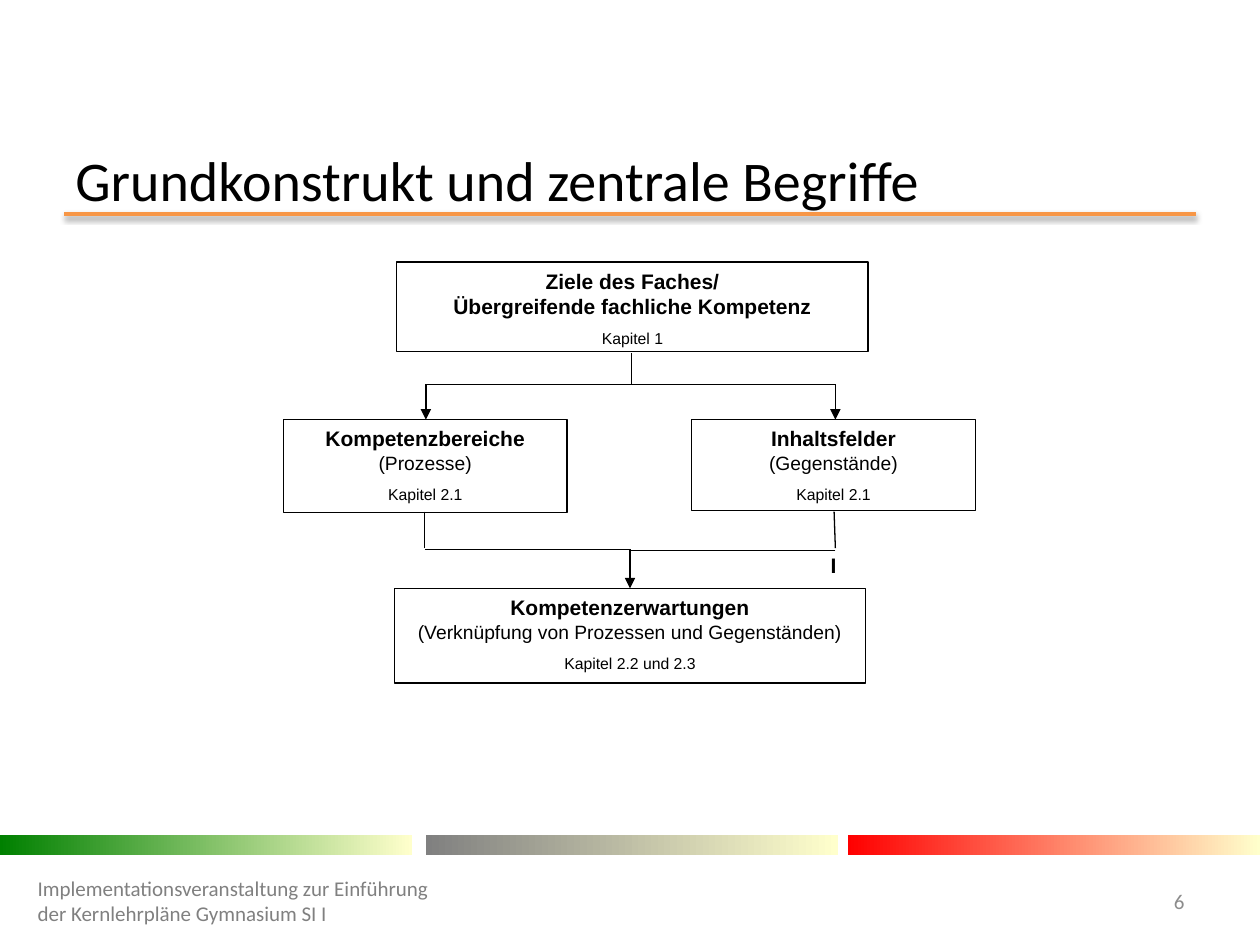
from dataclasses import dataclass

import pptx
import pptx.dml.color
import pptx.enum.dml
import pptx.enum.shapes
import pptx.enum.text
import pptx.oxml
import pptx.oxml.ns
import pptx.util
from pptx.util import Inches

ALIGN = pptx.enum.text.PP_ALIGN
ANCHOR = pptx.enum.text.MSO_ANCHOR
RECTANGLE = pptx.enum.shapes.MSO_SHAPE.RECTANGLE
STRAIGHT = pptx.enum.shapes.MSO_CONNECTOR.STRAIGHT
NAMESPACE = pptx.oxml.ns.nsdecls("a")


@dataclass
class Line:
    text: str
    size: float
    bold: bool = False
    space_before: float = 0


@dataclass
class Node:
    left: float
    top: float
    width: float
    height: float
    lines: list[Line]


@dataclass
class Label:
    text: str
    left: float
    top: float
    width: float
    height: float
    size: float
    color: str
    align: ALIGN = ALIGN.LEFT


@dataclass
class Link:
    start: tuple[float, float]
    end: tuple[float, float]
    arrow: bool = False


@dataclass
class Bar:
    left: float
    color: str


def paint(target, color: str) -> None:
    target.rgb = pptx.dml.color.RGBColor.from_string(color)


def format_run(span, size: float, color: str, font: str, bold: bool = False) -> None:
    span.font.name = font
    span.font.size = pptx.util.Pt(size)
    span.font.bold = bold
    paint(span.font.color, color)


def draw_label(page, label: Label) -> None:
    box = page.shapes.add_textbox(
        Inches(label.left), Inches(label.top), Inches(label.width), Inches(label.height))
    frame = box.text_frame
    frame.word_wrap = True
    frame.vertical_anchor = ANCHOR.MIDDLE
    frame.text = label.text
    para = frame.paragraphs[0]
    para.alignment = label.align
    format_run(para.runs[0], label.size, label.color, "Calibri")


def draw_rectangle(page, left: float, top: float, width: float, height: float):
    box = page.shapes.add_shape(
        RECTANGLE, Inches(left), Inches(top), Inches(width), Inches(height))
    box.shadow.inherit = False
    return box


def draw_bar(page, bar: Bar) -> None:
    box = draw_rectangle(page, bar.left, 6.63, 3.27, 0.16)
    box.line.fill.background()
    box.fill.gradient()
    box.fill.gradient_angle = 0
    for stop, position, color in zip(box.fill.gradient_stops, (0, 1), (bar.color, "FFFFCC")):
        stop.position = position
        paint(stop.color, color)


def draw_node(page, node: Node) -> None:
    box = draw_rectangle(page, node.left, node.top, node.width, node.height)
    box.fill.solid()
    paint(box.fill.fore_color, "FFFFFF")
    paint(box.line.color, "000000")
    box.line.width = pptx.util.Pt(0.75)
    frame = box.text_frame
    frame.word_wrap = True
    frame.vertical_anchor = ANCHOR.TOP
    frame.text = "\n".join(line.text for line in node.lines)
    for para, line in zip(frame.paragraphs, node.lines):
        para.alignment = ALIGN.CENTER
        para.space_before = pptx.util.Pt(line.space_before)
        format_run(para.runs[0], line.size, "000000", "Arial", line.bold)


def draw_link(page, link: Link, color: str = "000000", width: float = 0.75, shadow: str = ""):
    connector = page.shapes.add_connector(
        STRAIGHT, *(Inches(value) for value in link.start + link.end))
    paint(connector.line.color, color)
    connector.line.width = pptx.util.Pt(width)
    if link.arrow:
        connector.line._get_or_add_ln().append(
            pptx.oxml.parse_xml(f'<a:tailEnd {NAMESPACE} type="triangle"/>'))
    connector._element.spPr.append(
        pptx.oxml.parse_xml(f"<a:effectLst {NAMESPACE}>{shadow}</a:effectLst>"))


TITLE_SHADOW = (
    '<a:outerShdw blurRad="39400" dist="20300" dir="5400000" rotWithShape="0">'
    '<a:srgbClr val="000000"><a:alpha val="38000"/></a:srgbClr></a:outerShdw>')

BARS = [Bar(0, "008000"), Bar(3.38, "808080"), Bar(6.73, "FF0000")]

LABELS = [
    Label("Grundkonstrukt und zentrale Begriffe", 0.5, 1.23, 9, 0.39, 32, "000000"),
    Label("Implementationsveranstaltung zur Einführung der Kernlehrpläne Gymnasium SI I",
          0.2, 6.95, 3.31, 0.4, 12, "808080"),
    Label("6", 8.86, 6.95, 0.64, 0.4, 12, "8C8C8C", ALIGN.RIGHT),
]

NODES = [
    Node(3.15, 2.08, 3.74, 0.71, [
        Line("Ziele des Faches/", 12, True),
        Line("Übergreifende fachliche Kompetenz", 12, True),
        Line("Kapitel 1", 9, space_before=6)]),
    Node(2.25, 3.33, 2.25, 0.74, [
        Line("Kompetenzbereiche", 12, True),
        Line("(Prozesse)", 11),
        Line("Kapitel 2.1", 9, space_before=6)]),
    Node(5.49, 3.33, 2.25, 0.72, [
        Line("Inhaltsfelder", 12, True),
        Line("(Gegenstände)", 11),
        Line("Kapitel 2.1", 9, space_before=6),
        Line("I", 12, True, 28)]),
    Node(3.13, 4.67, 3.74, 0.75, [
        Line("Kompetenzerwartungen", 12, True),
        Line("(Verknüpfung von Prozessen und Gegenständen)", 11),
        Line("Kapitel 2.2 und 2.3", 9, space_before=6)]),
]

LINKS = [
    Link((5.01, 2.8), (5.01, 3.05)),
    Link((5, 3.05), (3.38, 3.05)),
    Link((6.63, 3.05), (5, 3.05)),
    Link((3.38, 3.05), (3.38, 3.33), True),
    Link((6.63, 3.05), (6.63, 3.33), True),
    Link((5, 4.36), (5, 4.67), True),
    Link((5, 4.36), (3.37, 4.36)),
    Link((6.63, 4.37), (5.01, 4.37)),
    Link((3.37, 4.06), (3.37, 4.35)),
    Link((6.62, 4.06), (6.63, 4.35)),
]


def main() -> None:
    deck = pptx.Presentation()
    deck.slide_width = Inches(10)
    deck.slide_height = Inches(7.5)
    page = deck.slides.add_slide(deck.slide_layouts[6])
    draw_link(page, Link((0.51, 1.7), (9.49, 1.7)), "F79646", 2, TITLE_SHADOW)
    for bar in BARS:
        draw_bar(page, bar)
    for label in LABELS:
        draw_label(page, label)
    for node in NODES:
        draw_node(page, node)
    for link in LINKS:
        draw_link(page, link)
    deck.save("out.pptx")


if __name__ == "__main__":
    main()
